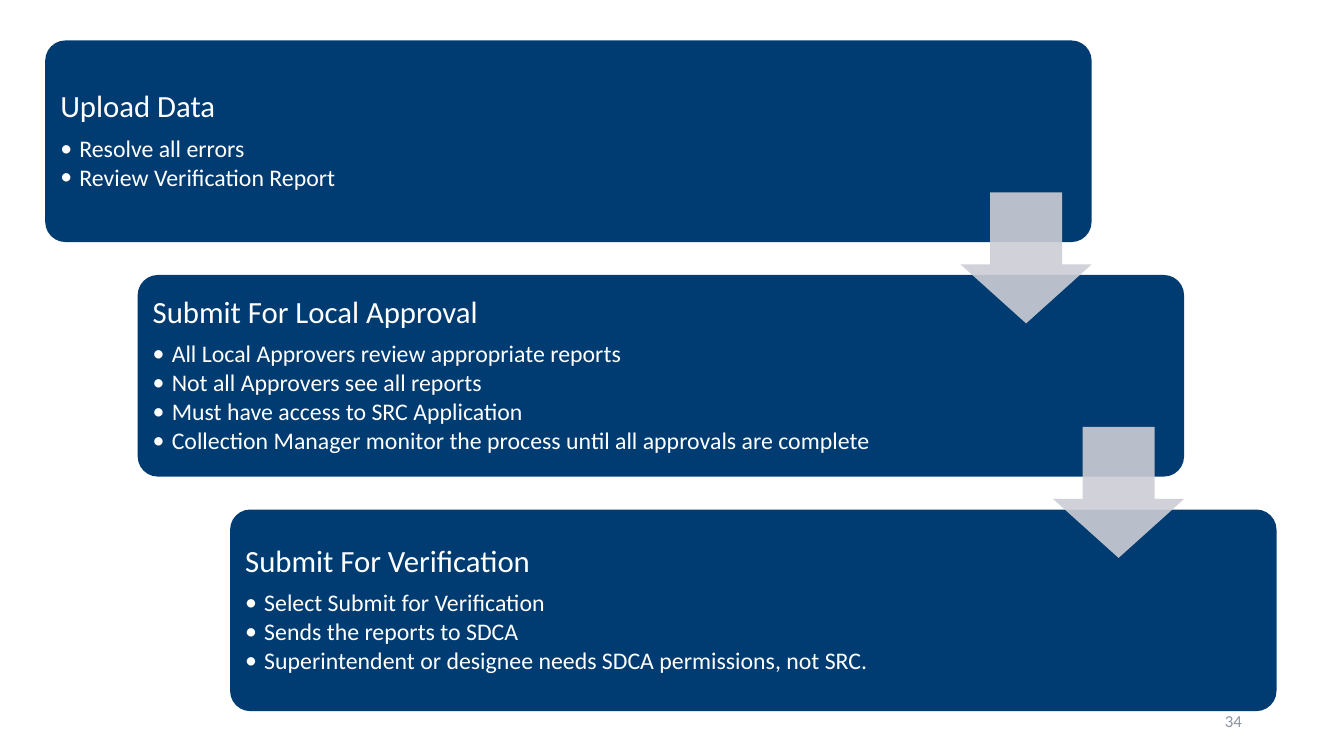
from dataclasses import dataclass

from lxml.etree import SubElement
from pptx import Presentation
from pptx.dml.color import RGBColor
from pptx.enum.shapes import MSO_SHAPE
from pptx.enum.text import MSO_ANCHOR, PP_ALIGN
from pptx.oxml.ns import qn
from pptx.shapes.autoshape import Shape
from pptx.shapes.shapetree import GroupShapes, SlideShapes
from pptx.text.text import TextFrame, _Paragraph as Paragraph
from pptx.util import Cm, Pt

FONT = "Calibri"
NAVY = "003C71"
SILVER = "CCCED5"
WHITE = "FFFFFF"
GRAY = "8C92A5"

FIRST_LEFT, FIRST_TOP = 1.14, 1.02
STEP_RIGHT, STEP_DOWN = 2.33, 5.91
BOX_WIDTH, BOX_HEIGHT = 26.37, 5.08
TEXT_OFFSET = 0.15
TEXT_INSET = 0.23
BULLET_INDENT = 0.48
ARROW_SIZE = 3.3
ARROW_DROP = 3.83


@dataclass
class Stage:
    title: str
    bullets: list[str]
    text_width: float = 20.45


STAGES = [
    Stage("Upload Data", ["Resolve all errors", "Review Verification Report"], 20.88),
    Stage(
        "Submit For Local Approval",
        [
            "All Local Approvers review appropriate reports",
            "Not all Approvers see all reports",
            "Must have access to SRC Application",
            "Collection Manager monitor the process until all approvals are complete",
        ],
    ),
    Stage(
        "Submit For Verification",
        [
            "Select Submit for Verification",
            "Sends the reports to SDCA",
            "Superintendent or designee needs SDCA permissions, not SRC.",
        ],
    ),
]


def color(value: str) -> RGBColor:
    return RGBColor.from_string(value)


def add_run(paragraph: Paragraph, text: str, size: float, text_color: str) -> None:
    run = paragraph.add_run()
    run.text = text
    run.font.name = FONT
    run.font.size = Pt(size)
    run.font.color.rgb = color(text_color)


def add_filled_shape(
    shapes: GroupShapes, kind: MSO_SHAPE, left: float, top: float,
    width: float, height: float, fill: str, adjustments: list[float],
) -> Shape:
    shape = shapes.add_shape(kind, Cm(left), Cm(top), Cm(width), Cm(height))
    shape.shadow.inherit = False
    shape.fill.solid()
    shape.fill.fore_color.rgb = color(fill)
    shape.line.fill.background()
    for index, adjustment in enumerate(adjustments):
        shape.adjustments[index] = adjustment
    return shape


def add_text_frame(
    shapes: SlideShapes | GroupShapes, left: float, top: float, width: float, height: float
) -> TextFrame:
    frame = shapes.add_textbox(Cm(left), Cm(top), Cm(width), Cm(height)).text_frame
    frame.word_wrap = True
    frame.vertical_anchor = MSO_ANCHOR.MIDDLE
    return frame


def add_bullet(paragraph: Paragraph, text: str) -> None:
    paragraph.level = 1
    paragraph.line_spacing = 0.9
    paragraph.space_after = Pt(2.3)
    properties = paragraph._p.get_or_add_pPr()
    properties.set("marL", str(Cm(BULLET_INDENT)))
    properties.set("indent", str(-Cm(BULLET_INDENT)))
    SubElement(properties, qn("a:buFont")).set("typeface", FONT)
    SubElement(properties, qn("a:buChar")).set("char", "•")
    add_run(paragraph, text, 17, WHITE)


def add_stage(shapes: GroupShapes, stage: Stage, left: float, top: float) -> None:
    add_filled_shape(
        shapes, MSO_SHAPE.ROUNDED_RECTANGLE, left, top, BOX_WIDTH, BOX_HEIGHT, NAVY, [0.1]
    )
    frame = add_text_frame(
        shapes, left + TEXT_OFFSET, top + TEXT_OFFSET,
        stage.text_width, BOX_HEIGHT - 2 * TEXT_OFFSET,
    )
    frame.margin_left = frame.margin_right = Cm(TEXT_INSET)
    frame.margin_top = frame.margin_bottom = Cm(TEXT_INSET)
    heading = frame.paragraphs[0]
    heading.line_spacing = 0.9
    heading.space_after = Pt(8.5)
    add_run(heading, stage.title, 22, WHITE)
    for bullet in stage.bullets:
        add_bullet(frame.add_paragraph(), bullet)


def add_arrow(shapes: GroupShapes, box_left: float, box_top: float) -> None:
    arrow = add_filled_shape(
        shapes, MSO_SHAPE.DOWN_ARROW, box_left + BOX_WIDTH - ARROW_SIZE,
        box_top + ARROW_DROP, ARROW_SIZE, ARROW_SIZE, SILVER, [0.45, 0.55],
    )
    arrow.adjustments[0], arrow.adjustments[1] = 0.55, 0.45
    fill_color = arrow._element.spPr.find(qn("a:solidFill"))[0]
    SubElement(fill_color, qn("a:alpha")).set("val", "90000")


def add_page_number(shapes: SlideShapes, number: str) -> None:
    frame = add_text_frame(shapes, 23.93, 17.65, 7.62, 1.02)
    paragraph = frame.paragraphs[0]
    paragraph.alignment = PP_ALIGN.RIGHT
    add_run(paragraph, number, 12, GRAY)


def main() -> None:
    presentation = Presentation()
    presentation.slide_width = Cm(33.87)
    presentation.slide_height = Cm(19.05)
    slide = presentation.slides.add_slide(presentation.slide_layouts[6])
    add_page_number(slide.shapes, "34")
    process = slide.shapes.add_group_shape().shapes
    corners = [
        (FIRST_LEFT + index * STEP_RIGHT, FIRST_TOP + index * STEP_DOWN)
        for index in range(len(STAGES))
    ]
    for stage, (left, top) in zip(STAGES, corners):
        add_stage(process, stage, left, top)
    for left, top in corners[:-1]:
        add_arrow(process, left, top)
    presentation.save("out.pptx")


if __name__ == "__main__":
    main()
